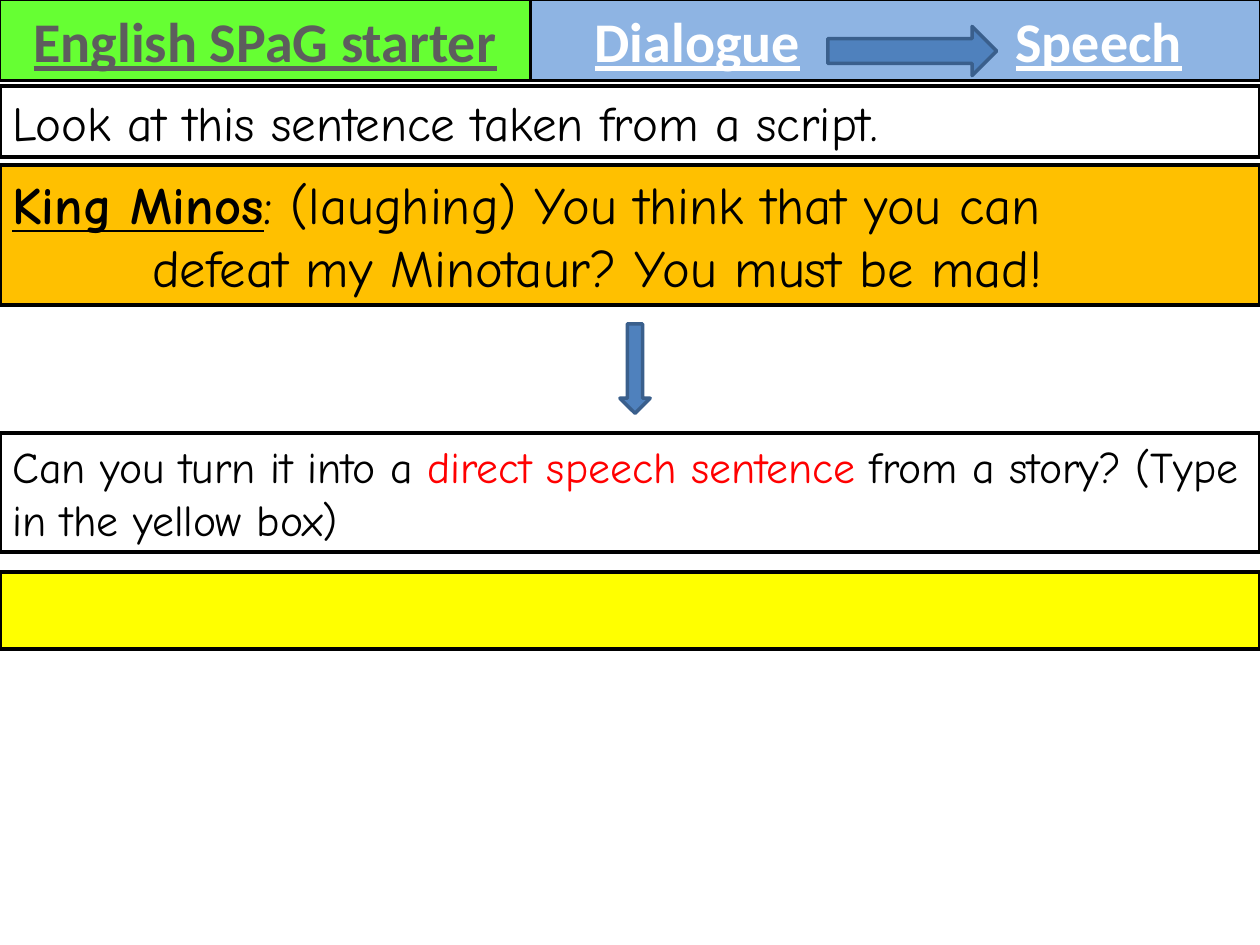
"""Build a starter slide on turning script dialogue into direct speech."""
import pptx
import pptx.dml.color
import pptx.enum.shapes
import pptx.enum.text
import pptx.util
from lxml import etree
from pptx.oxml.ns import qn

RGB = pptx.dml.color.RGBColor
BLACK, WHITE, GREY = RGB(0, 0, 0), RGB(255, 255, 255), RGB(0x5D, 0x5D, 0x5D)
GREEN, SKY = RGB(0x66, 0xFF, 0x33), RGB(0x8E, 0xB4, 0xE3)
AMBER, YELLOW, RED = RGB(0xFF, 0xC0, 0), RGB(255, 255, 0), RGB(255, 0, 0)
BLUE, NAVY = RGB(0x4F, 0x81, 0xBD), RGB(0x3A, 0x5F, 0x8C)

KIND = pptx.enum.shapes.MSO_SHAPE
ALIGN = pptx.enum.text.PP_ALIGN
WIDTH, HEIGHT = pptx.util.Inches(10), pptx.util.Inches(7.5)
COLS, ROWS = 100, 75
SPLIT, HEAD = 42.1, 6.4
BOLD = {"bold": True, "underline": True}
TITLE = {"name": "Calibri", "size": 32, **BOLD}


def col(count):
    """Return the length of a number of grid columns."""
    return round(WIDTH * count / COLS)


def row(count):
    """Return the length of a number of grid rows."""
    return round(HEIGHT * count / ROWS)


def apply(item, style):
    """Set attributes of an object from a dict."""
    for key, value in style.items():
        setattr(item, key, value)


def paint(shape, fill, line, weight):
    """Fill and outline a shape."""
    if fill is None:
        shape.fill.background()
    else:
        shape.fill.solid()
        shape.fill.fore_color.rgb = fill
    shape.line.color.rgb = line
    shape.line.width = pptx.util.Pt(weight)


def add_shape(slide, kind, area, fill, line=BLACK, weight=2.25):
    """Add a preset shape on the grid."""
    left, top, wide, high = area
    shape = slide.shapes.add_shape(kind, col(left), row(top), col(wide), row(high))
    shape.shadow.inherit = False
    paint(shape, fill, line, weight)
    return shape


def write(shape, runs, font, align=ALIGN.LEFT, **frame):
    """Write runs of text, colour and extra format into a shape."""
    text = shape.text_frame
    apply(text, {"word_wrap": True, "auto_size": pptx.enum.text.MSO_AUTO_SIZE.NONE,
                 "vertical_anchor": pptx.enum.text.MSO_ANCHOR.MIDDLE, **frame})
    para = text.paragraphs[0]
    para.alignment = align
    for words, color, extra in runs:
        run = para.add_run()
        run.text = words
        apply(run.font, {**font, "size": pptx.util.Pt(font["size"]), **extra})
        run.font.color.rgb = color
    return para


def add_title(slide):
    """Place the slide title in the left part of the header."""
    title = slide.shapes.title
    apply(title, {"left": 0, "top": 0, "width": col(SPLIT), "height": row(HEAD)})
    paint(title, GREEN, BLACK, 1.5)
    write(title, [("English SPaG starter", GREY, {})], TITLE, ALIGN.CENTER)


def add_topic(slide):
    """Add the topic header with a tab gap for its arrow."""
    box = add_shape(slide, KIND.RECTANGLE, (SPLIT, 0, COLS - SPLIT, HEAD), SKY, weight=1.5)
    para = write(box, [("Dialogue\tSpeech", WHITE, {})], TITLE, margin_left=col(5.1))
    stops = etree.SubElement(para._p.get_or_add_pPr(), qn("a:tabLst"))
    etree.SubElement(stops, qn("a:tab"), pos=str(col(33.4)), algn="l")


def add_band(slide, top, high, fill, size=28, runs=(), **frame):
    """Add a full-width band with text."""
    box = add_shape(slide, KIND.RECTANGLE, (0, top, COLS, high), fill)
    return write(box, runs, {"name": "Comic Neue", "size": size}, **frame)


def add_arrow(slide, kind, area):
    """Add a blue block arrow."""
    add_shape(slide, kind, area, BLUE, NAVY, 2)


def main():
    """Build and save the slide."""
    deck = pptx.Presentation()
    apply(deck, {"slide_width": WIDTH, "slide_height": HEIGHT})
    slide = deck.slides.add_slide(deck.slide_layouts.get_by_name("Title Only"))
    add_title(slide)
    add_topic(slide)
    add_band(slide, 6.8, 5.7, None, 28,
             [("Look at this sentence taken from a script.", BLACK, {})])
    line = add_band(slide, 13.1, 11.1, AMBER, 30, [
        ("King Minos", BLACK, BOLD),
        (": (laughing) You think that you can defeat my Minotaur? You must be mad!",
         BLACK, {}),
    ], margin_right=col(12))
    hang = col(11.1)
    for key, value in {"marL": hang, "indent": -hang}.items():
        line._p.get_or_add_pPr().set(key, str(value))
    add_arrow(slide, KIND.RIGHT_ARROW, (65.7, 2.1, 13.4, 3.9))
    add_band(slide, 45.4, 6.1, YELLOW)
    add_band(slide, 34.4, 9.4, None, 25, [
        ("Can you turn it into a ", BLACK, {}),
        ("direct speech sentence ", RED, {}),
        ("from a story? (Type in the yellow box)", BLACK, {}),
    ])
    add_arrow(slide, KIND.DOWN_ARROW, (49.2, 25.7, 2.4, 7.1))
    deck.save("out.pptx")


if __name__ == "__main__":
    main()
